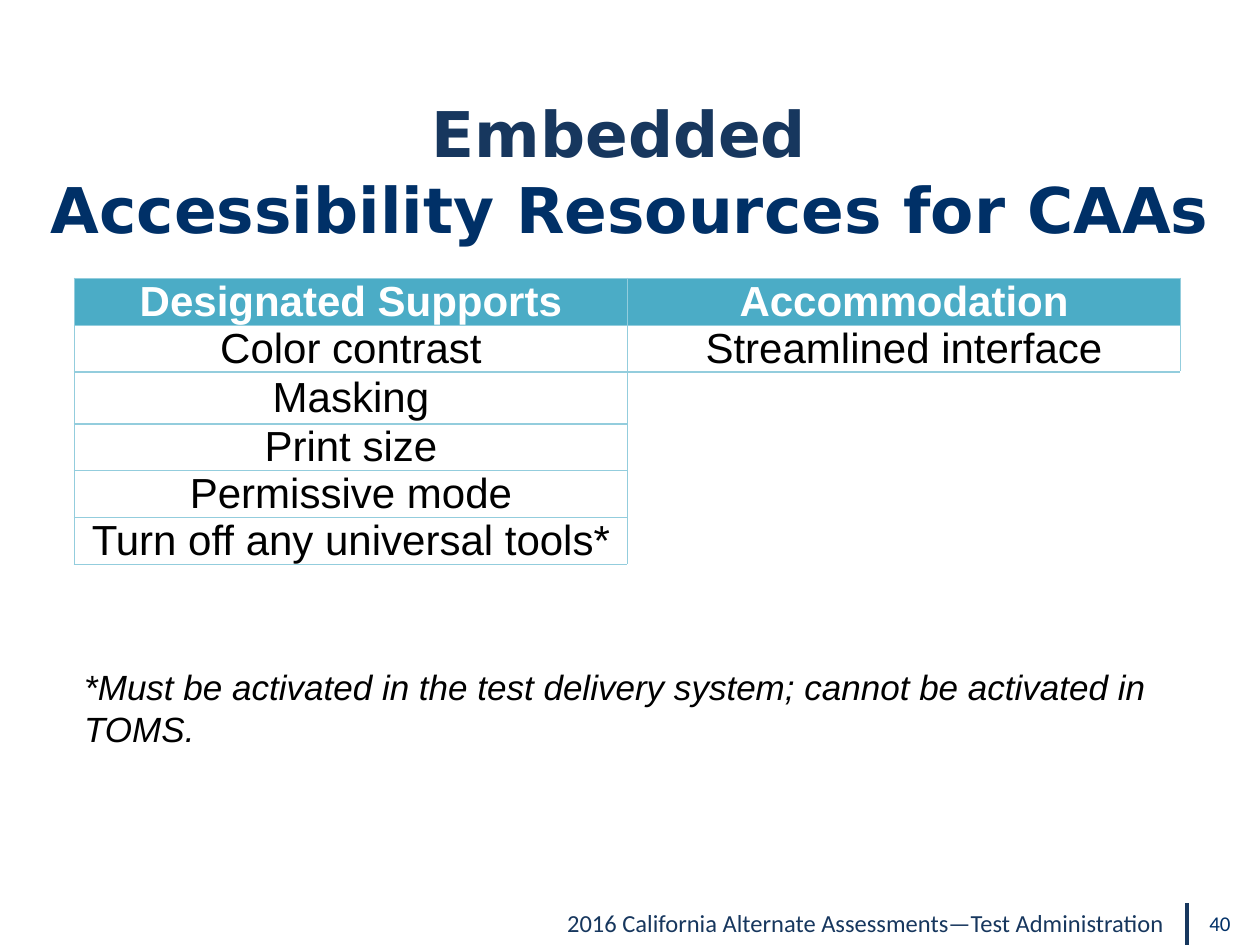
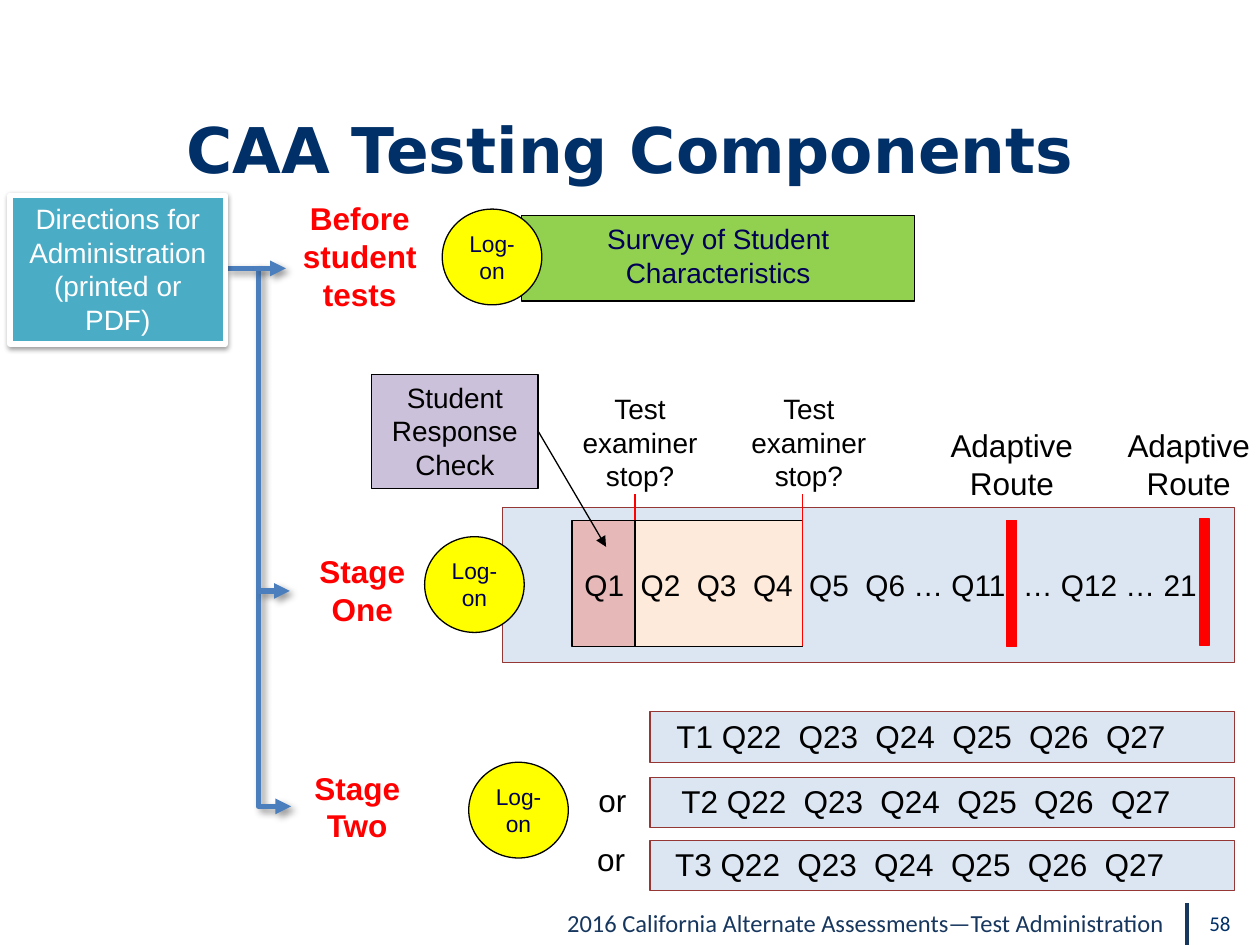
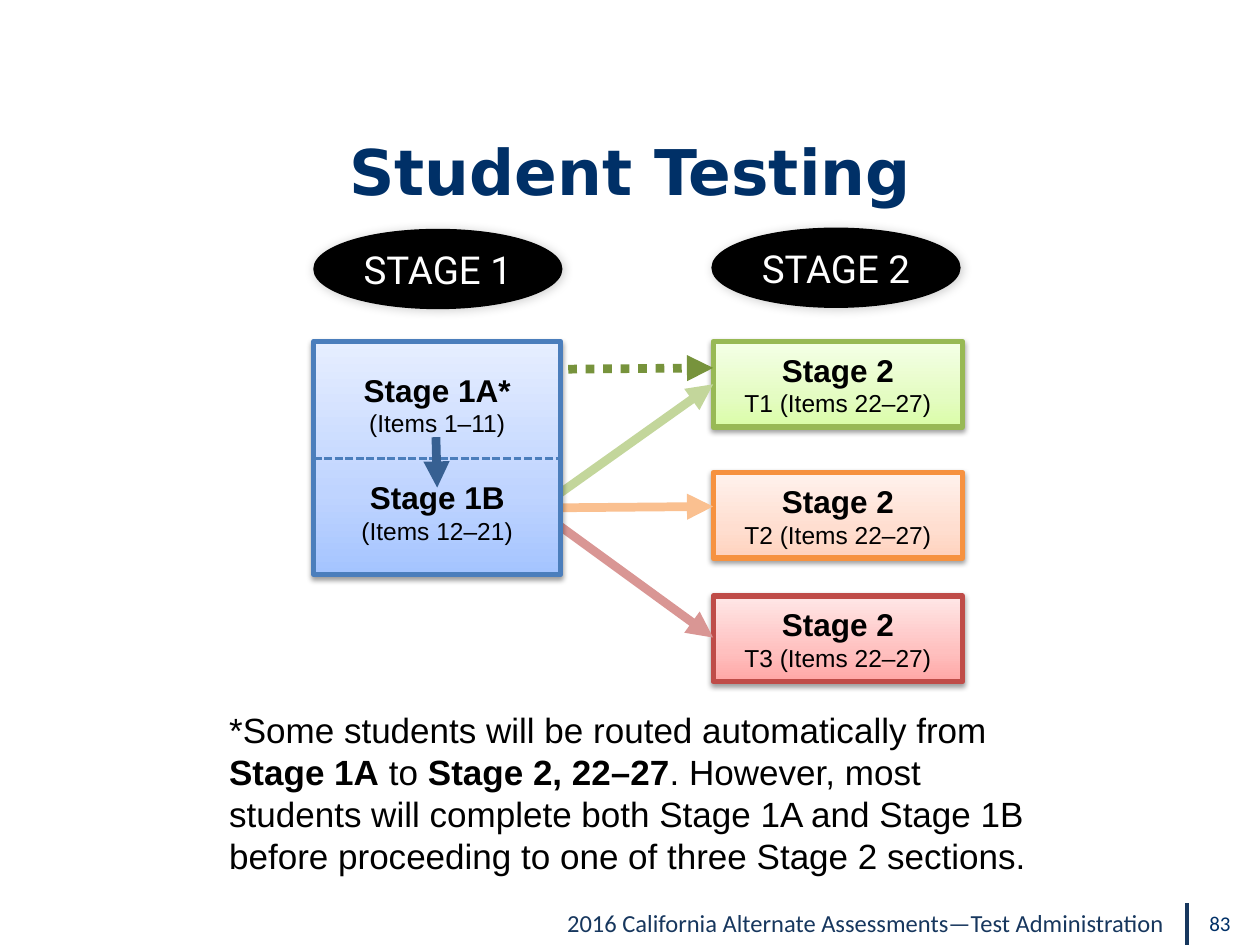
import lxml.etree
import pptx
import pptx.dml.color
import pptx.enum.dml
import pptx.enum.shapes
import pptx.enum.text
import pptx.oxml.ns
import pptx.util

Inches = pptx.util.Inches
Pt = pptx.util.Pt
qn = pptx.oxml.ns.qn
SHAPE = pptx.enum.shapes.MSO_SHAPE
CONNECTOR = pptx.enum.shapes.MSO_CONNECTOR
DASH = pptx.enum.dml.MSO_LINE
ALIGN = pptx.enum.text.PP_ALIGN
ANCHOR = pptx.enum.text.MSO_ANCHOR

COLORS = {
    "navy": "17375E", "title": "003067", "ink": "000054", "black": "000000",
    "white": "FFFFFF", "red": "FF0000", "yellow": "FFFF00", "green": "92D050",
    "teal": "4BACC6", "table_border": "93CDDD", "blue": "4B7EBC",
    "band": "DCE6F2", "band_border": "953735", "first_item": "E6B9B8",
    "early_items": "FDEADA", "check": "CCC1DA", "dark_blue": "376092",
    "t1_border": "98B955", "t2_border": "F69240", "t3_border": "BF4C48",
    "t1_route": "C3D69B", "t2_route": "FAC090", "t3_route": "D99694",
    "direct_route": "77933C",
}
GRADIENTS = {
    "stage1": ("A4C4FF", "BFD4FF", "E6EEFF"),
    "t1": ("DAFDA7", "E4FCC2", "F5FFE7"),
    "t2": ("FFD2BD", "FFDED0", "FFF2ED"),
    "t3": ("FFA6A5", "FFC0BF", "FFE7E7"),
}
# opacity %, blur pt, distance pt, direction in degrees
BOX_SHADOW = (38, 3.1, 1.6, 90)
ARROW_SHADOW = (40, 4, 3, 45)
OVAL_SHADOW = (20, 6, 1, 45)
FOOTER = "2016 California Alternate Assessments—Test Administration"


def rgb(name):
    return pptx.dml.color.RGBColor.from_string(COLORS[name])


def box(left, top, width, height):
    return [Inches(value) for value in (left, top, width, height)]


def child(parent, tag, **attributes):
    return lxml.etree.SubElement(parent, qn(tag), attributes)


def add_color(parent, hex_color):
    return child(child(parent, "a:solidFill"), "a:srgbClr", val=hex_color)


def write(frame, paragraphs, size=18, color="black", font="Arial", bold=False,
          italic=False, align=ALIGN.CENTER, anchor=ANCHOR.TOP):
    """Fill a text frame; each paragraph is a string or a list of (text, overrides)."""
    frame.word_wrap = True
    frame.auto_size = pptx.enum.text.MSO_AUTO_SIZE.NONE
    frame.vertical_anchor = anchor
    for index, runs in enumerate(paragraphs):
        paragraph = frame.paragraphs[0] if index == 0 else frame.add_paragraph()
        paragraph.alignment = align
        for text, overrides in [(runs, {})] if isinstance(runs, str) else runs:
            if text == "\n":
                paragraph.add_line_break()
                continue
            run = paragraph.add_run()
            run.text = text
            run.font.name = overrides.get("font", font)
            run.font.size = Pt(overrides.get("size", size))
            run.font.bold = overrides.get("bold", bold)
            run.font.italic = italic
            run.font.color.rgb = rgb(overrides.get("color", color))


def add_text(slide, place, paragraphs, **style):
    frame = slide.shapes.add_textbox(*box(*place)).text_frame
    write(frame, paragraphs, **style)
    return frame


def set_tabs(frame, stops):
    tabs = child(frame.paragraphs[0]._p.get_or_add_pPr(), "a:tabLst")
    for stop in stops:
        child(tabs, "a:tab", pos=str(Inches(stop)), algn="l")


def add_shadow(effects, shadow):
    opacity, blur, distance, direction = shadow
    outer = child(effects, "a:outerShdw", blurRad=str(Pt(blur)), dist=str(Pt(distance)),
                  dir=str(direction * 60000), algn="ctr", rotWithShape="0")
    tint = child(outer, "a:srgbClr", val=COLORS["black"])
    child(tint, "a:alpha", val=str(opacity * 1000))


def fill_gradient(shape, stops):
    """Run the stops from the bottom edge to the top edge."""
    shape.fill.gradient()
    shape.fill.gradient_angle = 90
    stop_list = shape._element.spPr.find(".//" + qn("a:gsLst"))
    stop_list.clear()
    for position, stop in zip((0, 35, 100), stops):
        child(child(stop_list, "a:gs", pos=str(position * 1000)), "a:srgbClr", val=stop)


def add_box(slide, place, fill, border="black", weight=0.75, kind=SHAPE.RECTANGLE,
            shadow=None, text=(), **style):
    shape = slide.shapes.add_shape(kind, *box(*place))
    shape.shadow.inherit = False
    if fill in GRADIENTS:
        fill_gradient(shape, GRADIENTS[fill])
    else:
        shape.fill.solid()
        shape.fill.fore_color.rgb = rgb(fill)
    shape.line.color.rgb = rgb(border)
    shape.line.width = Pt(weight)
    if shadow:
        add_shadow(shape._element.spPr.find(qn("a:effectLst")), shadow)
    write(shape.text_frame, text, **style)
    return shape


def add_line(slide, start, end, color, weight=0.75, arrow=False, dash=None,
             shadow=None, kind=CONNECTOR.STRAIGHT):
    ends = [Inches(value) for value in (*start, *end)]
    connector = slide.shapes.add_connector(kind, *ends)
    connector.line.color.rgb = rgb(color)
    connector.line.width = Pt(weight)
    if dash:
        connector.line.dash_style = dash
    if arrow:
        child(connector.line._get_or_add_ln(), "a:tailEnd", type="triangle")
    effects = child(connector._element.spPr, "a:effectLst")
    if shadow:
        add_shadow(effects, shadow)


def add_slide(deck, title_runs, number, title_top=1.0):
    """Start a slide with its title, footer and slide number."""
    slide = deck.slides.add_slide(deck.slide_layouts[5])
    title = slide.shapes.title
    title.left, title.top, title.width, title.height = box(0, title_top, 10, 0.7)
    write(title.text_frame, [title_runs], size=36, color="title", font="DejaVu Sans",
          bold=True, anchor=ANCHOR.MIDDLE)
    add_line(slide, (9.42, 7.17), (9.42, 7.5), "navy", 2)
    add_text(slide, (4.32, 7.16, 5.1, 0.34), [FOOTER], size=14, color="navy", font="Calibri")
    add_text(slide, (9.5, 7.18, 0.5, 0.32), [number], size=12, color="title",
             font="Calibri", align=ALIGN.LEFT)
    return slide


def set_borders(cell, sides):
    properties = cell._tc.get_or_add_tcPr()
    for side in sides:
        add_color(child(properties, "a:ln" + side, w=str(Pt(1))), COLORS["table_border"])


def add_resource_table(slide):
    rows = [("Designated Supports", "Accommodation"),
            ("Color contrast", "Streamlined interface"),
            ("Masking", ""), ("Print size", ""), ("Permissive mode", ""),
            ("Turn off any universal tools*", "")]
    heights = (0.35, 0.31, 0.41, 0.31, 0.31, 0.31)
    table = slide.shapes.add_table(len(rows), 2, *box(0.59, 2.21, 8.79, 2.0)).table
    table.first_row = table.horz_banding = False
    for column in table.columns:
        column.width = Inches(4.39)
    for r, (row, height) in enumerate(zip(rows, heights)):
        table.rows[r].height = Inches(height)
        for c, label in enumerate(row):
            cell = table.cell(r, c)
            cell.margin_left = cell.margin_right = Inches(0.07)
            cell.margin_top = cell.margin_bottom = 0
            cell.vertical_anchor = ANCHOR.MIDDLE
            set_borders(cell, "LRTB" if label else "LT" if r == 2 else "L")
            if r == 0:
                cell.fill.solid()
                cell.fill.fore_color.rgb = rgb("teal")
            else:
                cell.fill.background()
            if label:
                paragraph = cell.text_frame.paragraphs[0]
                paragraph.alignment = ALIGN.CENTER
                run = paragraph.add_run()
                run.text = label
                run.font.name = "Arial"
                run.font.size = Pt(24)
                run.font.bold = r == 0
                run.font.color.rgb = rgb("black" if r else "white")
    table.cell(2, 1).merge(table.cell(5, 1))


def build_resources(deck):
    slide = add_slide(deck, [("Embedded ", {"color": "navy"}), ("\n", {}),
                             ("Accessibility Resources for CAAs", {})], "40")
    add_resource_table(slide)
    add_text(slide, (0.57, 5.23, 8.77, 0.77),
             ["*Must be activated in the test delivery system; cannot be activated in TOMS."],
             size=20, italic=True, align=ALIGN.LEFT)


def add_log_on(slide, left, top):
    add_box(slide, (left, top, 0.79, 0.76), "yellow", kind=SHAPE.OVAL,
            text=["Log-on"], size=13, color="ink")


def add_stage_one(slide):
    add_box(slide, (3.99, 4.03, 5.81, 1.23), "band", "band_border")
    add_box(slide, (5.04, 4.13, 1.33, 1), "early_items")
    add_box(slide, (4.54, 4.13, 0.5, 1), "first_item")
    items = add_text(slide, (4.54, 4.45, 5.3, 0.5),
                     ["Q1\tQ2\tQ3\tQ4\tQ5\tQ6 … Q11\t… Q12 … 21"], size=17, align=ALIGN.LEFT)
    set_tabs(items, [2.23 * step / 5 for step in range(1, 6)] + [3.48])
    add_log_on(slide, 3.37, 4.26)

    for stop_x, bottom, label_left in ((5.04, 4.13, 4.45), (6.37, 5.13, 5.79)):
        add_line(slide, (stop_x, bottom), (stop_x, 3.92), "red")
        add_text(slide, (label_left, 3.06, 1.26, 0.91), ["Test examiner", "stop?"], size=16)
    for bar_left, bar_top, label_left, label_width in ((7.99, 4.13, 7.37, 1.32),
                                                       (9.52, 4.12, 8.82, 1.23)):
        add_box(slide, (bar_left, bar_top, 0.08, 1), "red", "red")
        add_text(slide, (label_left, 3.33, label_width, 0.71), ["Adaptive Route"])

    add_line(slide, (4.27, 3.42), (4.81, 4.34), "black", arrow=True)
    add_box(slide, (2.95, 2.97, 1.32, 0.91), "check", text=["Student Response Check"], size=16)


def add_stage_two(slide):
    for test, top, text_left in (("T1", 5.65, 5.27), ("T2", 6.17, 5.31), ("T3", 6.67, 5.26)):
        add_box(slide, (5.16, top, 4.64, 0.4), "band", "band_border")
        items = add_text(slide, (text_left, top - 0.01, 4.54, 0.4),
                         [test + " Q22\tQ23\tQ24\tQ25\tQ26\tQ27"], align=ALIGN.LEFT)
        set_tabs(items, [0.36 + 0.61 * step for step in range(1, 6)])
    for left, top in ((4.65, 6.15), (4.64, 6.62)):
        add_text(slide, (left, top, 0.51, 0.4), ["or"], align=ALIGN.LEFT)
    add_log_on(slide, 3.72, 6.05)


def build_components(deck):
    slide = add_slide(deck, "CAA Testing Components", "58", title_top=0.83)
    add_box(slide, (4.14, 1.71, 3.12, 0.68), "green",
            text=["Survey of Student Characteristics"], size=16, color="ink")
    add_log_on(slide, 3.51, 1.66)
    add_stage_one(slide)
    add_stage_two(slide)
    for label, place in (("Before student tests", (2.26, 1.53, 1.19, 1.01)),
                         ("Stage One", (2.37, 4.33, 1.01, 0.71)),
                         ("Stage Two", (2.31, 6.05, 1.05, 0.71))):
        add_text(slide, place, [label], color="red", bold=True)
    for start, end, kind in (((1.79, 2.13), (2.31, 6.4), CONNECTOR.ELBOW),
                             ((2.02, 2.13), (2.27, 2.13), CONNECTOR.STRAIGHT),
                             ((2.05, 4.69), (2.3, 4.69), CONNECTOR.STRAIGHT)):
        add_line(slide, start, end, "blue", 3, arrow=True, shadow=ARROW_SHADOW, kind=kind)
    add_box(slide, (0.08, 1.55, 1.71, 1.18), "teal", "white", 3, shadow=BOX_SHADOW,
            text=["Directions for Administration (printed or PDF)"], size=16, color="white")


def add_stage_box(slide, place, fill, border, text):
    return add_box(slide, place, fill, border, 3, shadow=BOX_SHADOW, text=text,
                   bold=True, anchor=ANCHOR.MIDDLE)


def item_range(text):
    return [(text, {"size": 14, "bold": False})]


def build_student_testing(deck):
    slide = add_slide(deck, "Student Testing", "83")
    for test, top, start_y, end_y in (("t1", 2.71, 3.91, 3.05), ("t2", 3.75, 4.03, 4.02),
                                      ("t3", 4.73, 4.18, 5.06)):
        add_stage_box(slide, (5.66, top, 1.98, 0.68), test, test + "_border",
                      ["Stage 2", item_range(test.upper() + " (Items 22–27)")])
        add_line(slide, (4.45, start_y), (5.66, end_y), test + "_route", 5, arrow=True)

    stage_one = add_stage_box(slide, (2.49, 2.71, 1.96, 1.85), "stage1", "blue",
                              ["Stage 1A*", item_range("(Items 1–11)"),
                               "Stage 1B", item_range("(Items 12–21)")])
    stage_one.text_frame.paragraphs[2].space_before = Pt(23)
    add_line(slide, (4.51, 2.93), (5.66, 2.92), "direct_route", 5, arrow=True,
             dash=DASH.ROUND_DOT)
    add_line(slide, (2.49, 3.64), (4.45, 3.64), "blue", 1.5, dash=DASH.SQUARE_DOT)
    add_line(slide, (3.46, 3.47), (3.47, 3.87), "dark_blue", 5, arrow=True)

    for heading, left, top in (("STAGE 1", 2.5, 1.83), ("STAGE 2", 5.66, 1.82)):
        add_box(slide, (left, top, 1.95, 0.61), "black", weight=2, kind=SHAPE.OVAL,
                shadow=OVAL_SHADOW, text=[heading], size=22, color="white",
                font="Roboto", anchor=ANCHOR.MIDDLE)

    strong = {"bold": True}
    routing_note = [("*Some students will be routed automatically from ", {}),
                    ("Stage 1A", strong), (" to ", {}), ("Stage 2, 22–27", strong),
                    (". However, most students will complete both Stage 1A and Stage 1B "
                     "before proceeding to one of three Stage 2 sections.", {})]
    add_text(slide, (1.72, 5.57, 6.78, 1.45), [routing_note], size=20, align=ALIGN.LEFT)


def main():
    deck = pptx.Presentation()
    deck.slide_width, deck.slide_height = Inches(10), Inches(7.5)
    build_resources(deck)
    build_components(deck)
    build_student_testing(deck)
    deck.save("out.pptx")


if __name__ == "__main__":
    main()
